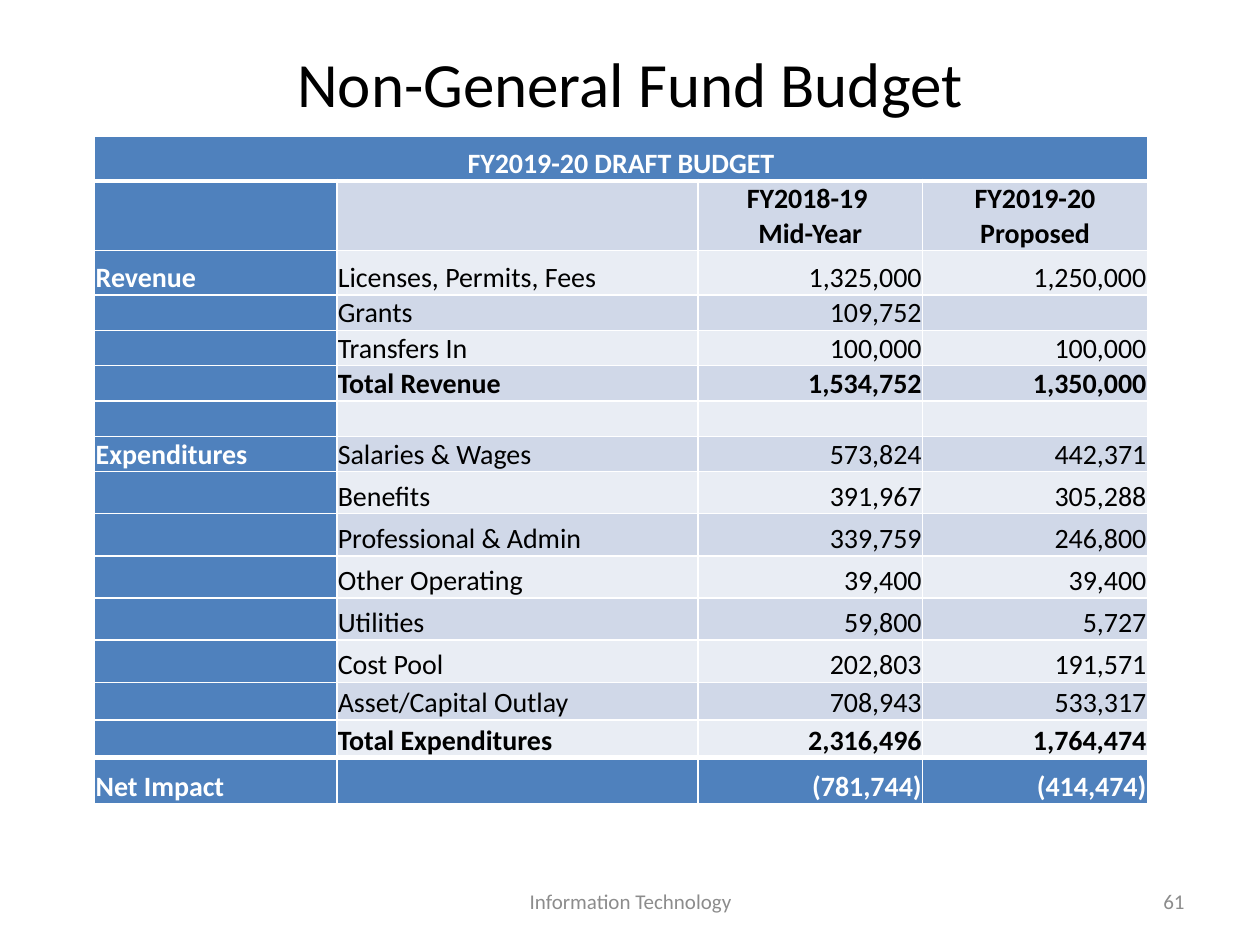
from lxml import etree
from pptx import Presentation
from pptx.dml.color import RGBColor
from pptx.enum.text import MSO_ANCHOR, PP_ALIGN
from pptx.oxml.ns import qn
from pptx.util import Cm, Pt

FONT = "Calibri"
BLACK, WHITE, GREY = "000000", "FFFFFF", "8C8C8C"
BLUE, DARK_BAND, LIGHT_BAND = "4F81BD", "D0D8E8", "E9EDF4"

COLUMN_WIDTHS = [4.88, 7.28, 4.53, 4.53]
ROW_HEIGHTS = [0.9, 1.4, 0.9] + [0.71] * 5 + [0.85] * 5 + [0.76] * 2 + [0.93]
BUDGET = [
    ["FY2019-20 DRAFT BUDGET", "", "", ""],
    ["", "", "FY2018-19 \nMid-Year", "FY2019-20 Proposed"],
    ["Revenue", "Licenses, Permits, Fees", "1,325,000", "1,250,000"],
    ["", "Grants", "109,752", ""],
    ["", "Transfers In", "100,000", "100,000"],
    ["", "Total Revenue", "1,534,752", "1,350,000"],
    ["", "", "", ""],
    ["Expenditures", "Salaries & Wages", "573,824", "442,371"],
    ["", "Benefits", "391,967", "305,288"],
    ["", "Professional & Admin", "339,759", "246,800"],
    ["", "Other Operating", "39,400", "39,400"],
    ["", "Utilities", "59,800", "5,727"],
    ["", "Cost Pool", "202,803", "191,571"],
    ["", "Asset/Capital Outlay", "708,943", "533,317"],
    ["", "Total Expenditures", "2,316,496", "1,764,474"],
    ["Net Impact", "", "(781,744)", "(414,474)"],
]
LAST = len(BUDGET) - 1


def color(value):
    return RGBColor.from_string(value)


def write(frame, text, size, ink, align, bold=False):
    """Fill a text frame with one paragraph for each line of text."""
    for index, line in enumerate(text.split("\n")):
        para = frame.add_paragraph() if index else frame.paragraphs[0]
        para.alignment = align
        if not line:
            # An empty cell still takes its row height from the text size
            etree.SubElement(para._p, qn("a:endParaRPr"), sz=str(size * 100))
            continue
        span = para.add_run()
        span.text = line
        span.font.name = FONT
        span.font.size = Pt(size)
        span.font.bold = bold
        span.font.color.rgb = color(ink)


def add_label(page, left, top, width, height, text, size, ink, align):
    box = page.shapes.add_textbox(Cm(left), Cm(top), Cm(width), Cm(height))
    box.text_frame.word_wrap = True
    box.text_frame.vertical_anchor = MSO_ANCHOR.MIDDLE
    write(box.text_frame, text, size, ink, align)


def set_borders(cell, row):
    """White rules, heavier under the heading and above the net impact."""
    widths = {"lnL": 1, "lnR": 1,
              "lnT": 3 if row in (1, LAST) else 1,
              "lnB": 3 if row in (0, LAST - 1) else 1}
    properties = cell._tc.get_or_add_tcPr()
    for side, width in widths.items():
        line = etree.SubElement(properties, qn(f"a:{side}"), w=str(Pt(width)))
        fill = etree.SubElement(line, qn("a:solidFill"))
        etree.SubElement(fill, qn("a:srgbClr"), val=WHITE)


def style_cell(cell, row, column, text):
    on_blue = row in (0, LAST) or column == 0
    if row < 2:
        align = PP_ALIGN.CENTER
    else:
        align = PP_ALIGN.RIGHT if column > 1 else PP_ALIGN.LEFT
    bold = on_blue or row == 1 or BUDGET[row][1].startswith("Total")

    set_borders(cell, row)
    cell.fill.solid()
    band = DARK_BAND if row % 2 else LIGHT_BAND
    cell.fill.fore_color.rgb = color(BLUE if on_blue else band)
    cell.margin_left = cell.margin_right = cell.margin_top = Cm(0.02)
    cell.margin_bottom = 0
    cell.vertical_anchor = MSO_ANCHOR.BOTTOM
    write(cell.text_frame, text, 16, WHITE if on_blue else BLACK, align, bold)


def add_budget_table(page, left, top):
    table = page.shapes.add_table(
        len(BUDGET), len(COLUMN_WIDTHS), Cm(left), Cm(top),
        Cm(sum(COLUMN_WIDTHS)), Cm(sum(ROW_HEIGHTS))).table
    for column, width in zip(table.columns, COLUMN_WIDTHS):
        column.width = Cm(width)
    for row, height in zip(table.rows, ROW_HEIGHTS):
        row.height = Cm(height)
    table.cell(0, 0).merge(table.cell(0, len(COLUMN_WIDTHS) - 1))
    for row, texts in enumerate(BUDGET):
        for column, text in enumerate(texts):
            style_cell(table.cell(row, column), row, column, text)


def add_footer(page, top):
    add_label(page, 8.69, top, 8.05, 1.02, "Information Technology", 12, GREY,
              PP_ALIGN.CENTER)
    add_label(page, 18.21, top, 5.92, 1.02, "61", 12, GREY, PP_ALIGN.RIGHT)


def main():
    deck = Presentation()
    deck.slide_width, deck.slide_height = Cm(25.4), Cm(19.05)
    page = deck.slides.add_slide(deck.slide_layouts[6])

    # Budget table
    add_budget_table(page, 1.91, 2.75)
    # Title
    add_label(page, 1.27, 0.76, 22.86, 1.78, "Non-General Fund Budget", 36,
              BLACK, PP_ALIGN.CENTER)
    # Footer and page number
    add_footer(page, 17.65)

    deck.save("out.pptx")


if __name__ == "__main__":
    main()
